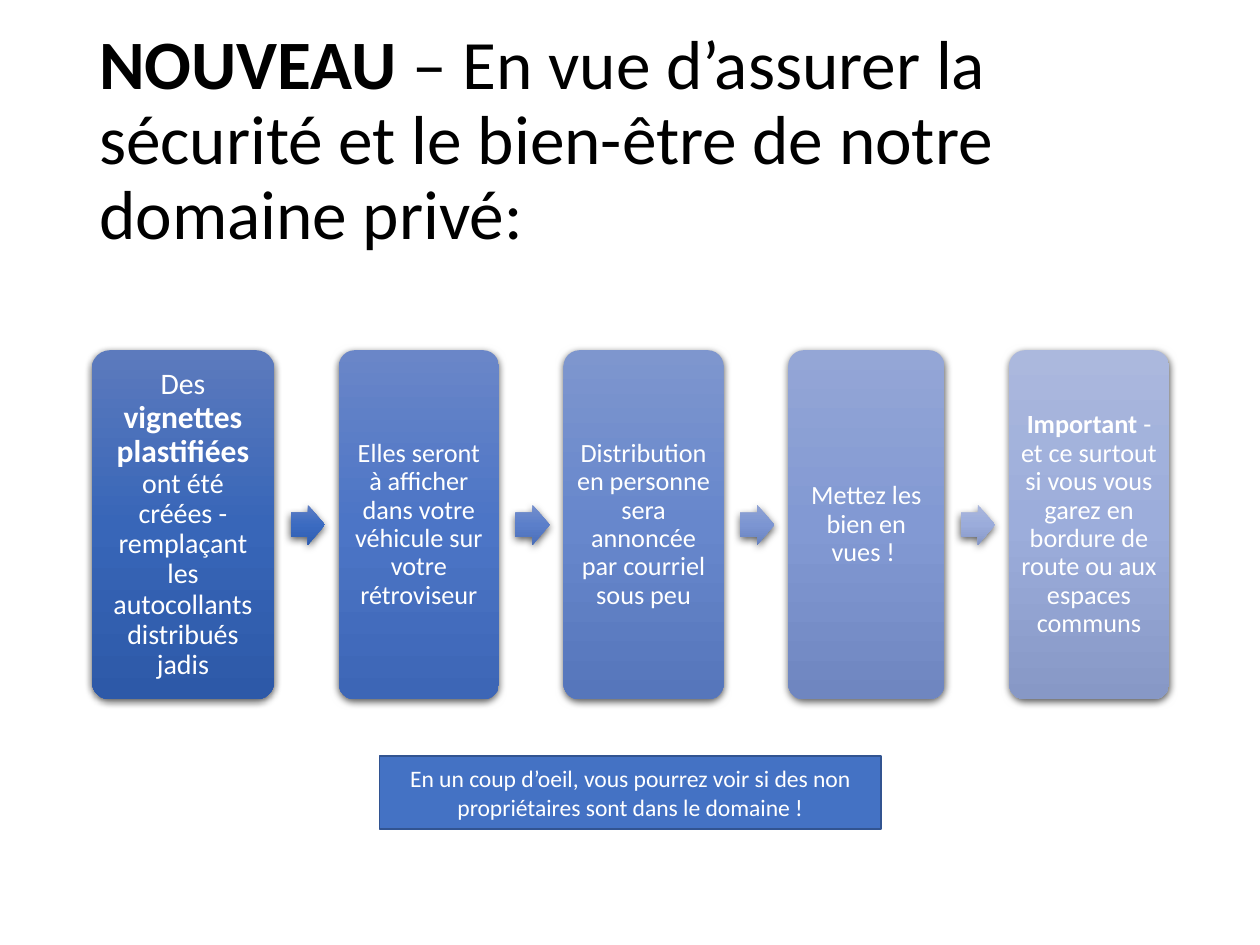
from copy import deepcopy

from lxml import etree
from pptx import Presentation
from pptx.dml.color import RGBColor
from pptx.enum import shapes as sh, text as tx
from pptx.oxml import parse_xml
from pptx.util import Cm, Pt

FONT = "Calibri"
BLACK = RGBColor(0, 0, 0)
WHITE = RGBColor(255, 255, 255)
BLUE = RGBColor(0x44, 0x72, 0xC4)
NAVY = RGBColor(0x32, 0x54, 0x91)

SHADOW = (
    '<a:effectLst xmlns:a="http://schemas.openxmlformats.org/drawingml/2006/main">'
    '<a:outerShdw blurRad="57150" dist="19050" dir="5400000" algn="ctr" rotWithShape="0">'
    '<a:srgbClr val="000000"><a:alpha val="63000"/></a:srgbClr>'
    '</a:outerShdw></a:effectLst>'
)

LEFT, TOP, HIGH, GAP = 1.85, 7.06, 7.04, 1.3
TIP_W, TIP_H = 0.69, 0.81

STEPS = [
    (3.68, 0.18, ("5C7ABD", "3866B8", "2D59A8"),
     [("Des ", 17, False), ("vignettes plastifiées ", 18, True),
      ("ont été créées - remplaçant les autocollants distribués jadis", 16, False)]),
    (3.23, 0.15, ("6A86C8", "4C75C6", "3D66B6"),
     [("Elles seront à afficher dans votre véhicule sur votre rétroviseur", 15, False)]),
    (3.23, 0.15, ("7E96CE", "6787CC", "5676BB"),
     [("Distribution en personne sera annoncée par courriel sous peu", 15, False)]),
    (3.15, 0.15, ("94A6D6", "8299D3", "6F86C0"),
     [("Mettez les bien en vues ! ", 15, False)]),
    (3.23, 0.15, ("ABB8DD", "9CADDB", "8798C6"),
     [("Important", 15, True),
      (" - et ce surtout si vous vous garez en bordure de route ou aux espaces communs",
       15, False)]),
]

TIPS = [
    ("5E7EC4", "3B6BC1", "2F5EB1"),
    ("758FCC", "5B7FCA", "4B6FB9"),
    ("8FA3D4", "7C95D2", "6983BF"),
    ("AAB7DD", "9BACDB", "8697C6"),
]


def write(shape, runs, color, align, pitch=None, inset=None):
    frame = shape.text_frame
    frame.word_wrap = True
    frame.vertical_anchor = tx.MSO_ANCHOR.MIDDLE
    if inset is not None:
        frame.margin_left = frame.margin_right = Cm(inset)
        frame.margin_top = frame.margin_bottom = Cm(inset)
    para = frame.paragraphs[0]
    para.alignment = align
    para.line_spacing = pitch
    for words, size, bold in runs:
        run = para.add_run()
        run.text = words
        run.font.name = FONT
        run.font.size = Pt(size)
        run.font.bold = bold
        run.font.color.rgb = color


def shade(shape, tones):
    fill = shape.fill
    fill.gradient()
    fill.gradient_angle = 270
    first = next(shape.element.spPr.iter("{*}gs"))
    first.addnext(deepcopy(first))
    for stop, tone, place in zip(fill.gradient_stops, tones, (0, 0.5, 1)):
        stop.color.rgb = RGBColor.from_string(tone)
        stop.position = place
    shape.line.fill.background()
    shape.element.spPr.append(parse_xml(SHADOW))


def add_step(slide, left, width, inset, tones, runs):
    card = slide.shapes.add_shape(
        sh.MSO_SHAPE.ROUNDED_RECTANGLE, Cm(left), Cm(TOP), Cm(width), Cm(HIGH))
    card.adjustments[0] = 0.1
    shade(card, tones)
    write(card, runs, WHITE, tx.PP_ALIGN.CENTER, 0.9, inset)


def add_tip(slide, left, tones):
    tip = slide.shapes.add_shape(
        sh.MSO_SHAPE.RIGHT_ARROW, Cm(left), Cm(TOP + (HIGH - TIP_H) / 2),
        Cm(TIP_W), Cm(TIP_H))
    tip.adjustments[0] = 0.6
    tip.adjustments[1] = 0.5
    shade(tip, tones)


def add_title(slide):
    box = slide.shapes.add_textbox(Cm(1.75), Cm(1.02), Cm(21.9), Cm(3.68))
    runs = [("NOUVEAU", 39.6, True),
            (" – En vue d’assurer la sécurité et le bien-être de notre domaine privé:",
             39.6, False)]
    write(box, runs, BLACK, tx.PP_ALIGN.LEFT, 0.9)


def add_note(slide):
    note = slide.shapes.add_shape(
        sh.MSO_SHAPE.RECTANGLE, Cm(7.65), Cm(15.24), Cm(10.11), Cm(1.47))
    note.shadow.inherit = False
    note.fill.solid()
    note.fill.fore_color.rgb = BLUE
    note.line.color.rgb = NAVY
    note.line.width = Pt(1)
    runs = [("En un coup d’oeil, vous pourrez voir si des non propriétaires "
             "sont dans le domaine !", 13.5, False)]
    write(note, runs, WHITE, tx.PP_ALIGN.CENTER)


def main():
    deck = Presentation()
    deck.slide_width, deck.slide_height = Cm(25.4), Cm(19.05)
    slide = deck.slides.add_slide(deck.slide_layouts[6])
    add_title(slide)
    left = LEFT
    for index, (width, inset, tones, runs) in enumerate(STEPS):
        if index:
            add_tip(slide, left - GAP + 0.33, TIPS[index - 1])
        add_step(slide, left, width, inset, tones, runs)
        left += width + GAP
    add_note(slide)
    deck.save("out.pptx")


if __name__ == "__main__":
    main()
